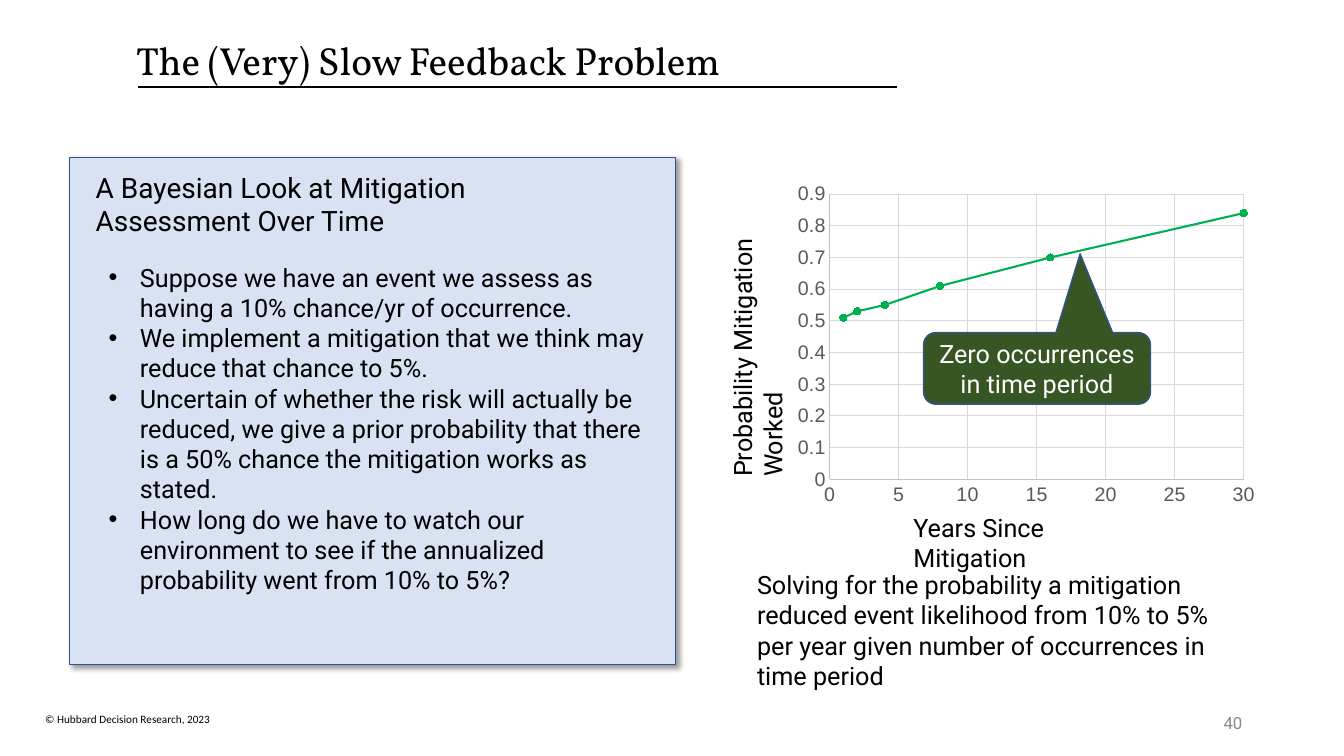
import pptx
import pptx.chart.data
import pptx.dml.color
import pptx.enum.chart
import pptx.enum.shapes
import pptx.enum.text
import pptx.oxml
import pptx.oxml.ns
import pptx.util
from lxml import etree

RGBColor = pptx.dml.color.RGBColor
BLACK = RGBColor(0x00, 0x00, 0x00)
WHITE = RGBColor(0xFF, 0xFF, 0xFF)
PALE_BLUE = RGBColor(0xD8, 0xE2, 0xF3)
EDGE_BLUE = RGBColor(0x31, 0x53, 0x8F)
DARK_GREEN = RGBColor(0x38, 0x56, 0x23)
CURVE_GREEN = RGBColor(0x00, 0xB0, 0x50)
AXIS_TEXT = RGBColor(0x59, 0x59, 0x59)
AXIS_LINE = RGBColor(0xBF, 0xBF, 0xBF)
GRID_LINE = RGBColor(0xD9, 0xD9, 0xD9)
NUMBER_GREY = RGBColor(0x88, 0x88, 0x88)

ALIGN = pptx.enum.text.PP_ALIGN
ANCHOR = pptx.enum.text.MSO_ANCHOR
SHAPE = pptx.enum.shapes.MSO_SHAPE

CHANCE_WORKED = {1: 0.51, 2: 0.53, 4: 0.55, 8: 0.61, 16: 0.7, 30: 0.84}
BULLETS = [
    "Suppose we have an event we assess as having a 10% chance/yr of occurrence.",
    "We implement a mitigation that we think may reduce that chance to 5%.",
    "Uncertain of whether the risk will actually be reduced, we give a prior probability "
    "that there is a 50% chance the mitigation works as stated.",
    "How long do we have to watch our environment to see if the annualized probability "
    "went from 10% to 5%?",
]


def write(frame, *texts, size=18, font="Roboto", color=BLACK, align=ALIGN.LEFT,
          anchor=ANCHOR.TOP, bullet=None, spacing=None, right=0.1):
    frame.word_wrap = True
    frame.auto_size = pptx.enum.text.MSO_AUTO_SIZE.NONE
    frame.vertical_anchor = anchor
    frame.margin_left = pptx.util.Inches(0.1)
    frame.margin_right = pptx.util.Inches(right)
    frame.margin_top = frame.margin_bottom = pptx.util.Inches(0.05)
    for index, text in enumerate(texts):
        para = frame.add_paragraph() if index else frame.paragraphs[0]
        para.alignment = align
        if spacing:
            para.line_spacing = spacing
        if bullet:
            props = para._p.get_or_add_pPr()
            indent = pptx.util.Inches(0.31)
            props.set("marL", str(indent))
            props.set("indent", str(-indent))
            face = etree.SubElement(props, pptx.oxml.ns.qn("a:buFont"))
            face.set("typeface", "Arial")
            mark = etree.SubElement(props, pptx.oxml.ns.qn("a:buChar"))
            mark.set("char", bullet)
        span = para.add_run()
        span.text = text
        span.font.size = pptx.util.Pt(size)
        span.font.name = font
        span.font.color.rgb = color


def stroke(line, color, width):
    line.color.rgb = color
    line.width = pptx.util.Pt(width)


class SlideBuilder:
    def __init__(self, deck):
        self.deck = deck
        self.page = deck.slides.add_slide(deck.slide_layouts[5])

    def place(self, left, top, width, height):
        across, down = self.deck.slide_width / 100, self.deck.slide_height / 100
        return [int(left * across), int(top * down), int(width * across), int(height * down)]

    def title(self, area, text, **style):
        box = self.page.shapes.title
        box.left, box.top, box.width, box.height = self.place(*area)
        write(box.text_frame, text, **style)

    def text(self, area, *texts, rotation=0, **style):
        box = self.page.shapes.add_textbox(*self.place(*area))
        box.rotation = rotation
        write(box.text_frame, *texts, **style)

    def rule(self, left, top, width):
        x, y, length, _ = self.place(left, top, width, 0)
        line = self.page.shapes.add_connector(
            pptx.enum.shapes.MSO_CONNECTOR.STRAIGHT, x, y, x + length, y)
        stroke(line.line, BLACK, 1.5)
        etree.SubElement(line._element.spPr, pptx.oxml.ns.qn("a:effectLst"))

    def shape(self, kind, area, fill):
        box = self.page.shapes.add_shape(kind, *self.place(*area))
        box.shadow.inherit = False
        box.fill.solid()
        box.fill.fore_color.rgb = fill
        stroke(box.line, EDGE_BLUE, 1)
        return box

    def panel(self, area):
        box = self.shape(SHAPE.RECTANGLE, area, PALE_BLUE)
        effects = box._element.spPr.find(pptx.oxml.ns.qn("a:effectLst"))
        effects.append(pptx.oxml.parse_xml(
            f'<a:outerShdw {pptx.oxml.ns.nsdecls("a")} blurRad="{pptx.util.Pt(4)}" '
            f'dist="{pptx.util.Pt(3)}" dir="2700000" algn="tl" rotWithShape="0">'
            '<a:srgbClr val="000000"><a:alpha val="40000"/></a:srgbClr></a:outerShdw>'))

    def callout(self, area, text, pointer):
        box = self.shape(SHAPE.ROUNDED_RECTANGULAR_CALLOUT, area, DARK_GREEN)
        for index, value in enumerate(pointer):
            box.adjustments[index] = value
        write(box.text_frame, text, color=WHITE, align=ALIGN.CENTER, anchor=ANCHOR.MIDDLE)

    def curve(self, area, points):
        kinds = pptx.enum.chart
        data = pptx.chart.data.XyChartData()
        series_data = data.add_series("Series 1")
        for years, chance in points.items():
            series_data.add_data_point(years, chance)
        chart = self.page.shapes.add_chart(
            kinds.XL_CHART_TYPE.XY_SCATTER_SMOOTH, *self.place(*area), data).chart
        chart.has_legend = chart.has_title = False
        chart.font.name = "Arial"
        chart.font.size = pptx.util.Pt(14)
        chart.plots[0].vary_by_categories = False
        for axis, top, step in ((chart.category_axis, 30, 5), (chart.value_axis, 0.9, 0.1)):
            axis.minimum_scale, axis.maximum_scale, axis.major_unit = 0, top, step
            axis.major_tick_mark = axis.minor_tick_mark = kinds.XL_TICK_MARK.NONE
            axis.has_major_gridlines = True
            axis.tick_labels.number_format = "General"
            axis.tick_labels.number_format_is_linked = False
            axis.tick_labels.font.name = "Arial"
            axis.tick_labels.font.size = pptx.util.Pt(14)
            axis.tick_labels.font.color.rgb = AXIS_TEXT
            stroke(axis.format.line, AXIS_LINE, 0.75)
            stroke(axis.major_gridlines.format.line, GRID_LINE, 0.75)
        series = chart.plots[0].series[0]
        series.smooth = True
        stroke(series.format.line, CURVE_GREEN, 1.5)
        series.marker.style = kinds.XL_MARKER_STYLE.CIRCLE
        series.marker.size = 5
        series.marker.format.fill.solid()
        series.marker.format.fill.fore_color.rgb = CURVE_GREEN
        stroke(series.marker.format.line, CURVE_GREEN, 0.75)


def main():
    deck = pptx.Presentation()
    deck.slide_width = pptx.util.Inches(13.33)
    deck.slide_height = pptx.util.Inches(7.5)
    slide = SlideBuilder(deck)

    slide.text((2.63, 93.6, 18.75, 3.2), "© Hubbard Decision Research, 2023",
               size=8, font="Calibri")
    slide.rule(10.28, 11.47, 56.49)
    slide.title((9.38, 2.93, 72.17, 10.8), "The (Very) Slow Feedback Problem",
                size=28, font="Vollkorn", anchor=ANCHOR.MIDDLE, spacing=0.9)

    slide.panel((5.18, 20.8, 45.09, 67.07))
    slide.text((7.35, 34, 41.71, 45.73), *BULLETS, bullet="•")
    slide.text((6.38, 21.87, 40.81, 10.27),
               "A Bayesian Look at Mitigation Assessment Over Time", size=20, right=0.4)

    slide.curve((58.66, 23.33, 35.41, 44.4), CHANCE_WORKED)
    slide.callout((68.72, 44, 16.88, 9.47), "Zero occurrences in time period",
                  (0.19, -1.6, 0.17))
    slide.text((42.91, 39.87, 24.61, 5.33), "Probability Mitigation Worked", rotation=270)
    slide.text((67.22, 67.07, 18.38, 5.33), "Years Since Mitigation")
    slide.text((55.59, 74.67, 37.81, 13.47),
               "Solving for the probability a mitigation reduced event likelihood from 10% to 5% "
               "per year given number of occurrences in time period")
    slide.text((70.67, 92.93, 22.51, 5.33), "40", size=12, color=NUMBER_GREY,
               align=ALIGN.RIGHT, anchor=ANCHOR.MIDDLE)
    deck.save("out.pptx")


if __name__ == "__main__":
    main()
